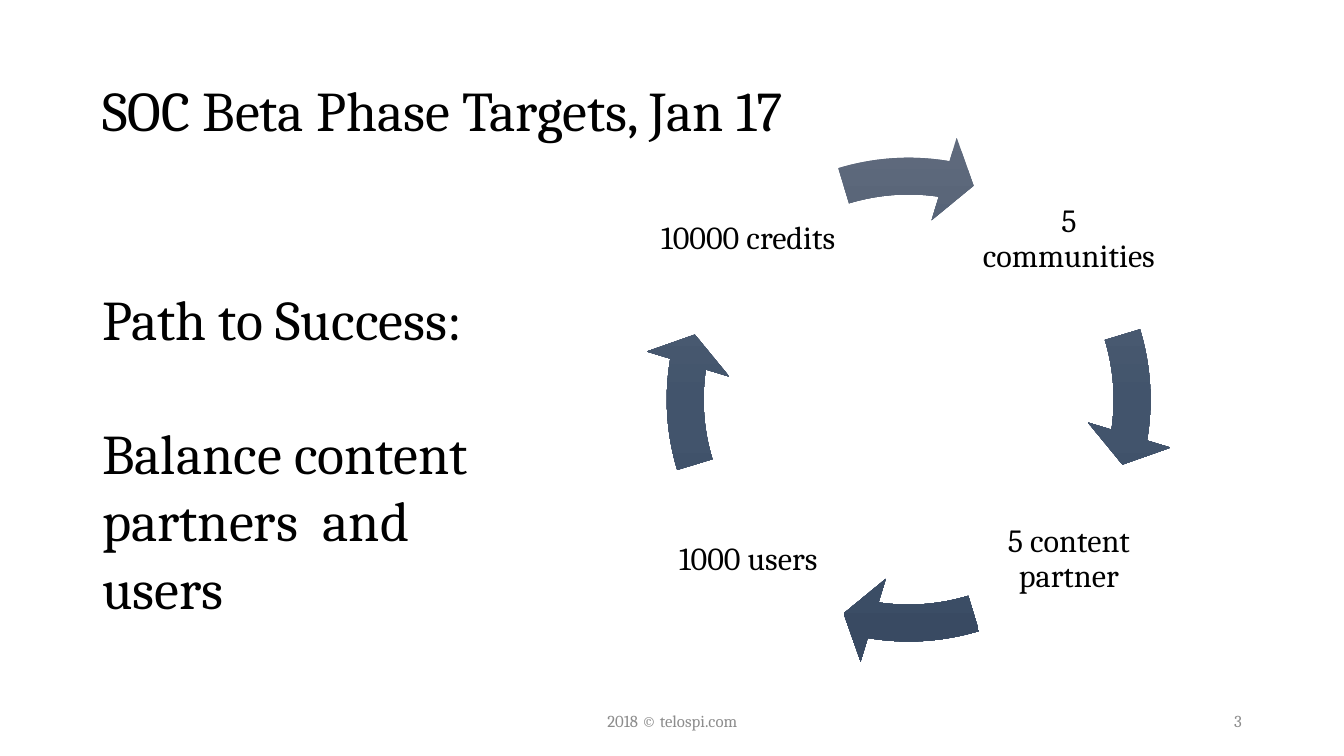
from dataclasses import dataclass

from lxml.etree import SubElement
from pptx import Presentation
from pptx.dml.color import RGBColor
from pptx.enum.shapes import MSO_SHAPE
from pptx.enum.text import MSO_ANCHOR, MSO_AUTO_SIZE, PP_ALIGN
from pptx.oxml.ns import qn
from pptx.shapes.autoshape import Shape
from pptx.slide import Slide
from pptx.text.text import TextFrame
from pptx.util import Cm, Pt


@dataclass(frozen=True)
class Theme:
    font: str = "Cambria"
    text: str = "000000"
    muted: str = "8C8C8C"
    arrow_stops: tuple[tuple[int, str], ...] = (
        (0, "606B7D"), (50, "42546C"), (100, "394A62"))
    heading_size: int = 40
    label_size: int = 23
    footer_size: int = 12


@dataclass(frozen=True)
class Box:
    left: float
    top: float
    width: float
    height: float

    def place(self, shape: Shape) -> None:
        shape.left, shape.top = Cm(self.left), Cm(self.top)
        shape.width, shape.height = Cm(self.width), Cm(self.height)


@dataclass(frozen=True)
class Target:
    """A cycle label and the side of the centre on which it sits."""
    text: str
    side_x: int
    side_y: int


@dataclass(frozen=True)
class Footer:
    text: str
    box: Box
    alignment: PP_ALIGN


THEME = Theme()

CENTRE_X, CENTRE_Y = 22.9, 10.07
LABEL_OFFSET = 4.04
LABEL_SIZE = 4.75
LABEL_INSET = 0.08
RING_SIZE = 13.44

# Circular arrow adjustments; angles are in units of 5/3 degree.
FULL_TURN = 216
ARROW_WIDTH, HEAD_WIDTH = 0.069, 0.081
HEAD_ANGLE, END_ANGLE, START_ANGLE = 4.66, 5.48, 205.86

TARGETS = (
    Target("5 communities", 1, -1),
    Target("5 content partner", 1, 1),
    Target("1000 users", -1, 1),
    Target("10000 credits", -1, -1),
)
FOOTERS = (
    Footer("2018 © telospi.com", Box(11.23, 17.65, 11.43, 1.02), PP_ALIGN.CENTER),
    Footer("3", Box(23.93, 17.65, 7.62, 1.02), PP_ALIGN.RIGHT),
)


def format_text(frame: TextFrame, size: int, color: str, alignment: PP_ALIGN,
                anchor: MSO_ANCHOR, line_spacing: float = 1.0) -> None:
    frame.word_wrap = True
    frame.auto_size = MSO_AUTO_SIZE.NONE
    frame.vertical_anchor = anchor
    for paragraph in frame.paragraphs:
        paragraph.alignment = alignment
        paragraph.line_spacing = line_spacing
        for run in paragraph.runs:
            run.font.name = THEME.font
            run.font.size = Pt(size)
            run.font.color.rgb = RGBColor.from_string(color)


def add_text(slide: Slide, box: Box, text: str) -> TextFrame:
    shape = slide.shapes.add_textbox(0, 0, 0, 0)
    box.place(shape)
    shape.text_frame.text = text
    return shape.text_frame


def add_title(slide: Slide) -> None:
    title = slide.shapes.title
    Box(2.33, 1.02, 29.21, 3.68).place(title)
    title.text_frame.text = "SOC Beta Phase Targets, Jan 17"
    format_text(title.text_frame, THEME.heading_size, THEME.text,
                PP_ALIGN.LEFT, MSO_ANCHOR.MIDDLE, 0.9)


def add_path_to_success(slide: Slide) -> None:
    frame = add_text(slide, Box(2.33, 7.04, 10.29, 8.81),
                     "Path to Success:\nBalance content partners  and users")
    format_text(frame, THEME.heading_size, THEME.text,
                PP_ALIGN.LEFT, MSO_ANCHOR.TOP)
    frame.paragraphs[1].space_before = Pt(48)


def add_target_label(slide: Slide, target: Target) -> None:
    box = Box(CENTRE_X + target.side_x * LABEL_OFFSET - LABEL_SIZE / 2,
              CENTRE_Y + target.side_y * LABEL_OFFSET - LABEL_SIZE / 2,
              LABEL_SIZE, LABEL_SIZE)
    frame = add_text(slide, box, target.text)
    frame.margin_left = frame.margin_right = Cm(LABEL_INSET)
    frame.margin_top = frame.margin_bottom = Cm(LABEL_INSET)
    format_text(frame, THEME.label_size, THEME.text,
                PP_ALIGN.CENTER, MSO_ANCHOR.MIDDLE, 0.9)


def fill_top_to_bottom(shape: Shape) -> None:
    """Apply the three-stop arrow gradient."""
    shape.fill.gradient()
    shape.fill.gradient_angle = 270
    stops = shape.element.spPr.find(qn("a:gradFill")).find(qn("a:gsLst"))
    for stop in list(stops):
        stops.remove(stop)
    for percent, color in THEME.arrow_stops:
        stop = SubElement(stops, qn("a:gs"), pos=str(percent * 1000))
        SubElement(stop, qn("a:srgbClr"), val=color)


def add_cycle_arrow(slide: Slide, quarter: int) -> None:
    arrow = slide.shapes.add_shape(MSO_SHAPE.CIRCULAR_ARROW, 0, 0, 0, 0)
    Box(CENTRE_X - RING_SIZE / 2, CENTRE_Y - RING_SIZE / 2,
        RING_SIZE, RING_SIZE).place(arrow)
    turn = quarter * FULL_TURN / 4
    values = (ARROW_WIDTH, HEAD_ANGLE, END_ANGLE + turn,
              (START_ANGLE + turn) % FULL_TURN, HEAD_WIDTH)
    for index, value in enumerate(values):
        arrow.adjustments[index] = value
    fill_top_to_bottom(arrow)
    arrow.line.fill.background()
    arrow.shadow.inherit = False


def add_footer(slide: Slide, footer: Footer) -> None:
    frame = add_text(slide, footer.box, footer.text)
    format_text(frame, THEME.footer_size, THEME.muted,
                footer.alignment, MSO_ANCHOR.MIDDLE)


def main() -> None:
    presentation = Presentation()
    presentation.slide_width, presentation.slide_height = Cm(33.87), Cm(19.05)
    slide = presentation.slides.add_slide(presentation.slide_layouts[5])
    add_title(slide)
    for quarter, target in enumerate(TARGETS):
        add_target_label(slide, target)
        add_cycle_arrow(slide, quarter)
    add_path_to_success(slide)
    for footer in FOOTERS:
        add_footer(slide, footer)
    presentation.save("out.pptx")


if __name__ == "__main__":
    main()
